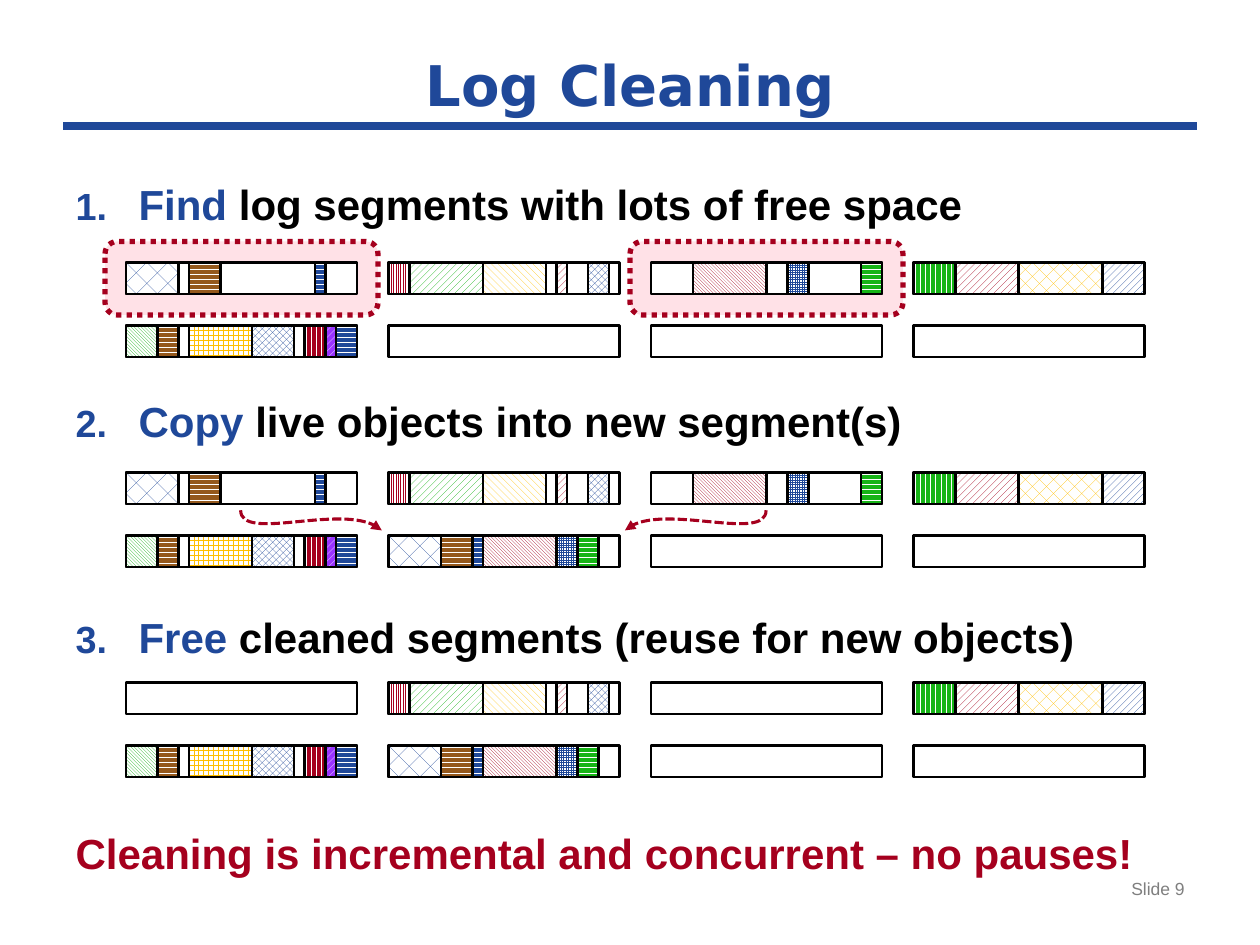
from lxml.etree import SubElement
from pptx import Presentation
from pptx.dml.color import RGBColor
from pptx.enum.dml import MSO_LINE, MSO_PATTERN
from pptx.enum.shapes import MSO_CONNECTOR, MSO_SHAPE
from pptx.enum.text import MSO_ANCHOR, MSO_AUTO_SIZE, PP_ALIGN
from pptx.oxml.ns import qn
from pptx.util import Inches, Pt

HUES = {
    "blue": "1F4899", "red": "A5001E", "green": "16B416", "brown": "94581C",
    "gold": "FFC000", "amber": "FFC611", "violet": "9933FF", "pink": "FFE1E7",
    "black": "000000", "white": "FFFFFF", "gray": "7F7F7F",
}
STEPS = [
    ("Find", " log segments with lots of free space"),
    ("Copy", " live objects into new segment(s)"),
    ("Free", " cleaned segments (reuse for new objects)"),
]
CLOSE = "Cleaning is incremental and concurrent – no pauses!"

# fmt: off
LOGS = {
    "empty": [],
    "sparse": [(0, 5, "diagBrick", "blue"), (6, 3, "dkHorz", "brown"),
               (18, 1, "dkHorz", "blue")],
    "mixed": [(0, 2, "ltVert", "red"), (2, 7, "wdUpDiag", "green"),
              (9, 6, "wdDnDiag", "amber"), (16, 1, "wdUpDiag", "red"),
              (19, 2, "openDmnd", "blue")],
    "loose": [(4, 7, "dkDnDiag", "red"), (13, 2, "smGrid", "blue"),
              (20, 2, "dkHorz", "green")],
    "full": [(0, 4, "dkVert", "green"), (4, 6, "wdUpDiag", "red"),
             (10, 8, "pct25", "gold"), (18, 4, "wdUpDiag", "blue")],
    "dense": [(0, 3, "dkDnDiag", "green"), (3, 2, "dkHorz", "brown"),
              (6, 6, "lgGrid", "gold"), (12, 4, "lgCheck", "blue"),
              (17, 2, "dkVert", "red"), (19, 1, "wdUpDiag", "white", "violet"),
              (20, 2, "dkHorz", "blue")],
    "merged": [(0, 5, "diagBrick", "blue"), (5, 3, "dkHorz", "brown"),
               (8, 1, "dkHorz", "blue"), (9, 7, "dkDnDiag", "red"),
               (16, 2, "smGrid", "blue"), (18, 2, "dkHorz", "green")],
}
# fmt: on
GRIDS = [
    [["sparse", "mixed", "loose", "full"], ["dense", "empty", "empty", "empty"]],
    [["sparse", "mixed", "loose", "full"], ["dense", "merged", "empty", "empty"]],
    [["empty", "mixed", "empty", "full"], ["dense", "merged", "empty", "empty"]],
]
PICKS = [0, 2]
CURVES = [[(1.91, 4.05), (1.91, 4.3), (2.77, 3.97), (3.03, 4.21)],
          [(6.08, 4.05), (6.08, 4.3), (5.22, 3.97), (4.96, 4.21)]]
UNIT = 1 / 12
LEFT, TOP, WIDE, HIGH = 12, 25, 22, 3
PITCH, DROP, STAGE = 25, 6, 20


def hue(name):
    """Return the named colour."""
    return RGBColor.from_string(HUES[name])


def block(slide, x, y, w, h, fill="white", kind=MSO_SHAPE.RECTANGLE):
    """Add an outlined block measured in grid units."""
    box = slide.shapes.add_shape(kind, *(Inches(v * UNIT) for v in (x, y, w, h)))
    box.shadow.inherit = False
    box.fill.solid()
    box.fill.fore_color.rgb = hue(fill)
    box.line.color.rgb = hue("black")
    box.line.width = Pt(1.5)
    return box


def segment(slide, x, y, parts):
    """Add one log segment and its live objects."""
    block(slide, x, y, WIDE, HIGH)
    for start, size, mesh, front, *back in parts:
        fill = block(slide, x + start, y, size, HIGH).fill
        fill.patterned()
        fill.pattern = MSO_PATTERN.from_xml(mesh)
        fill.fore_color.rgb = hue(front)
        fill.back_color.rgb = hue(back[0] if back else "white")


def curve(slide, spots):
    """Add a dashed cubic arrow through four control points."""
    spots = [(Inches(x), Inches(y)) for x, y in spots]
    pen = slide.shapes.build_freeform(*spots[0])
    pen.add_line_segments(spots[-1:], close=False)
    shape = pen.convert_to_shape()
    shape.shadow.inherit = False
    shape.fill.background()
    shape.line.color.rgb = hue("red")
    shape.line.width = Pt(1.75)
    shape.line.dash_style = MSO_LINE.SQUARE_DOT
    shape.line.dash_style = MSO_LINE.DASH
    edge = shape.line._get_or_add_ln()
    edge.find(qn("a:prstDash")).set("val", "sysDash")
    SubElement(edge, qn("a:tailEnd"), type="triangle")
    line = next(shape._element.iter(qn("a:lnTo")))
    bend = SubElement(line.getparent(), qn("a:cubicBezTo"))
    for x, y in spots[1:]:
        SubElement(bend, qn("a:pt"), x=str(x - shape.left), y=str(y - shape.top))
    line.getparent().remove(line)


def style(font, size, color, bold=True, face="Arial"):
    """Set the main traits of a font."""
    font.name, font.size, font.bold = face, Pt(size), bold
    font.color.rgb = hue(color)


def place(shape, x, y, w, h):
    """Move and size a shape in inches."""
    shape.left, shape.top, shape.width, shape.height = map(Inches, (x, y, w, h))


def bullet(para, number):
    """Give a paragraph a blue number or no bullet."""
    props = para._p.get_or_add_pPr()
    props.set("marL", str(Inches(0.5) if number else 0))
    props.set("indent", str(-Inches(0.5) if number else 0))
    if not number:
        SubElement(props, qn("a:buNone"))
        return
    SubElement(SubElement(props, qn("a:buClr")), qn("a:srgbClr"), val=HUES["blue"])
    SubElement(props, qn("a:buSzPct"), val="90000")
    SubElement(props, qn("a:buFont"), typeface="Arial")
    SubElement(props, qn("a:buAutoNum"), type="arabicPeriod")


def write(slide):
    """Fill the title, the list and the slide label."""
    title, body = slide.shapes.title, slide.placeholders[1]
    place(title, 0.5, 0.33, 9, 0.67)
    frame = title.text_frame
    frame.text = "Log Cleaning"
    frame.auto_size = MSO_AUTO_SIZE.NONE
    frame.vertical_anchor = MSO_ANCHOR.MIDDLE
    frame.paragraphs[0].alignment = PP_ALIGN.CENTER
    style(frame.paragraphs[0].font, 32, "blue", face="DejaVu Sans")

    place(body, 0.5, 1.33, 9, 5.6)
    frame = body.text_frame
    frame.auto_size = MSO_AUTO_SIZE.NONE
    frame.vertical_anchor = MSO_ANCHOR.TOP
    frame.margin_top = Inches(0.09)
    rows = [[(verb, "blue"), (rest, "black")] for verb, rest in STEPS]
    rows.append([(CLOSE, "red")])
    for i, row in enumerate(rows):
        para = frame.add_paragraph() if i else frame.paragraphs[0]
        para.space_before = Pt(94.7 if i else 0)
        bullet(para, i < len(STEPS))
        for text, color in row:
            run = para.add_run()
            run.text = text
            style(run.font, 24, color)

    label = slide.shapes.add_textbox(*map(Inches, (7.17, 6.92, 2.33, 0.43)))
    label.text_frame.word_wrap = True
    para = label.text_frame.paragraphs[0]
    para.text = "Slide 9"
    para.alignment = PP_ALIGN.RIGHT
    style(para.font, 10, "gray", bold=False)


def main():
    """Build the log cleaning slide."""
    deck = Presentation()
    deck.slide_width, deck.slide_height = Inches(10), Inches(7.5)
    slide = deck.slides.add_slide(deck.slide_layouts[1])
    write(slide)
    ends = map(Inches, (0.5, 1, 9.5, 1))
    rule = slide.shapes.add_connector(MSO_CONNECTOR.STRAIGHT, *ends)
    rule.line.color.rgb = hue("blue")
    rule.line.width = Pt(4.5)
    SubElement(rule._element.spPr, qn("a:effectLst"))
    for col in PICKS:
        ring = block(slide, LEFT + col * PITCH - 2, TOP - 2, WIDE + 4, HIGH + 4,
                     "pink", MSO_SHAPE.ROUNDED_RECTANGLE)
        ring.line.color.rgb = hue("red")
        ring.line.width = Pt(3)
        ring.line.dash_style = MSO_LINE.ROUND_DOT
    for i, grid in enumerate(GRIDS):
        for j, row in enumerate(grid):
            for k, log in enumerate(row):
                segment(slide, LEFT + k * PITCH, TOP + i * STAGE + j * DROP, LOGS[log])
    for spots in CURVES:
        curve(slide, spots)
    deck.save("out.pptx")


if __name__ == "__main__":
    main()
